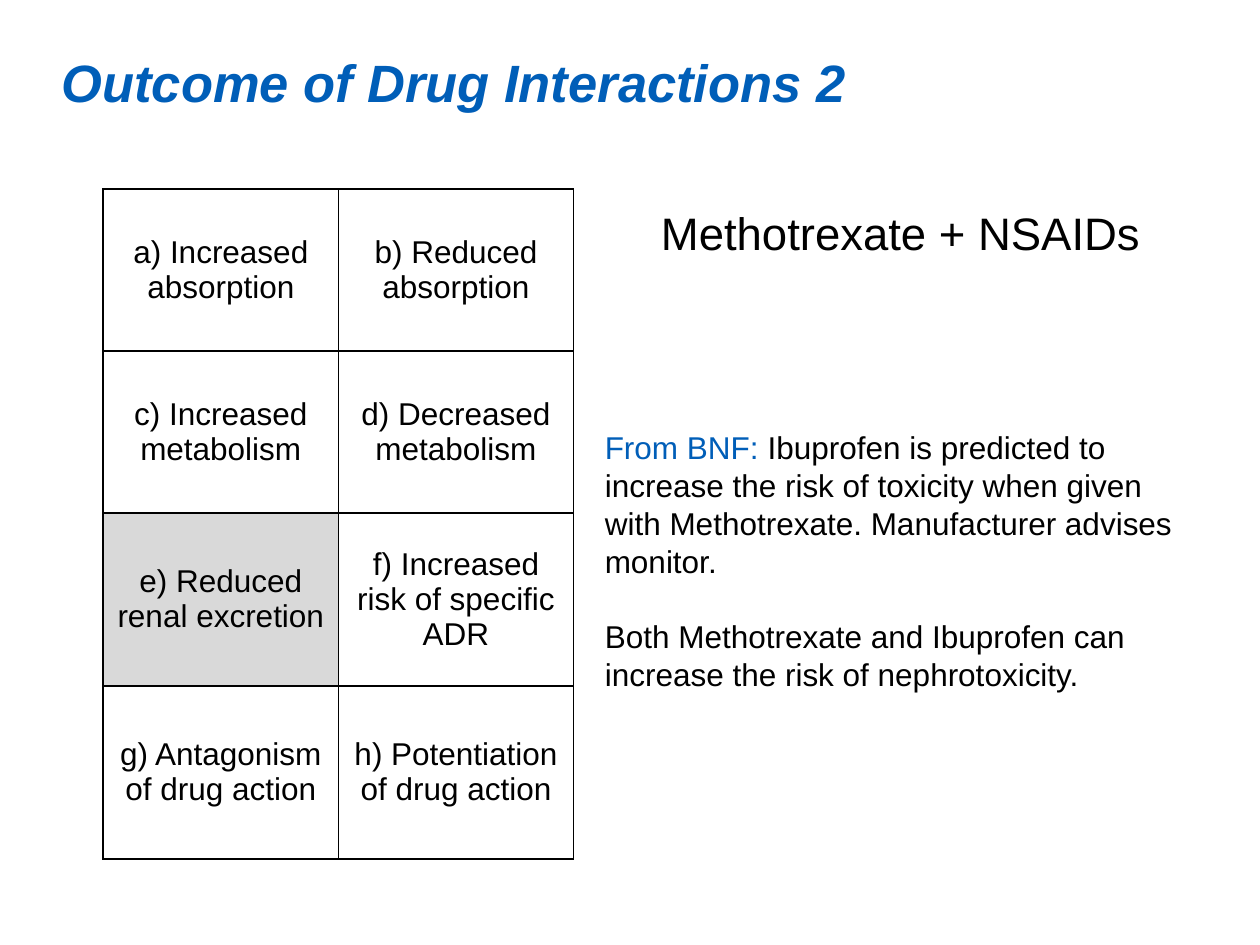
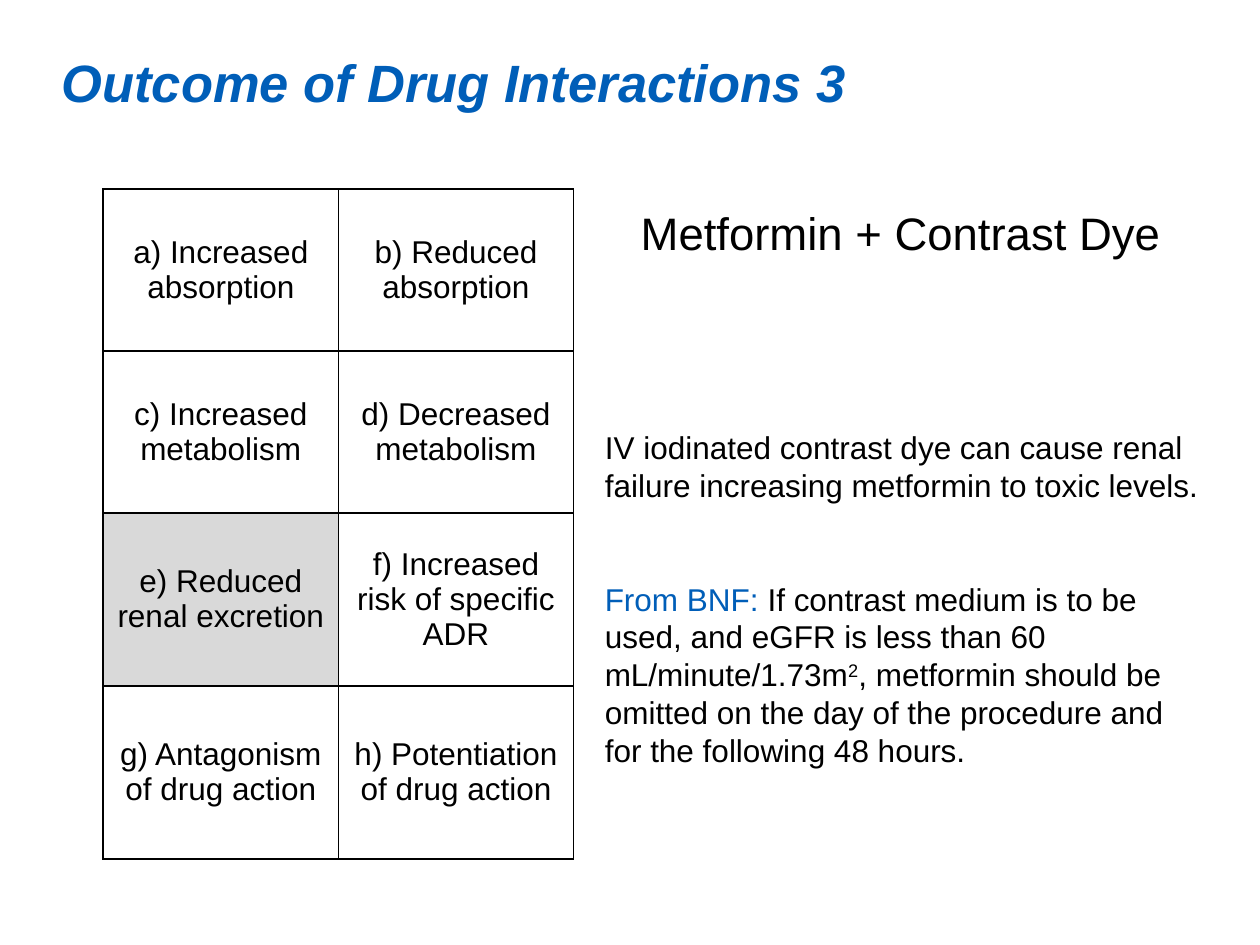
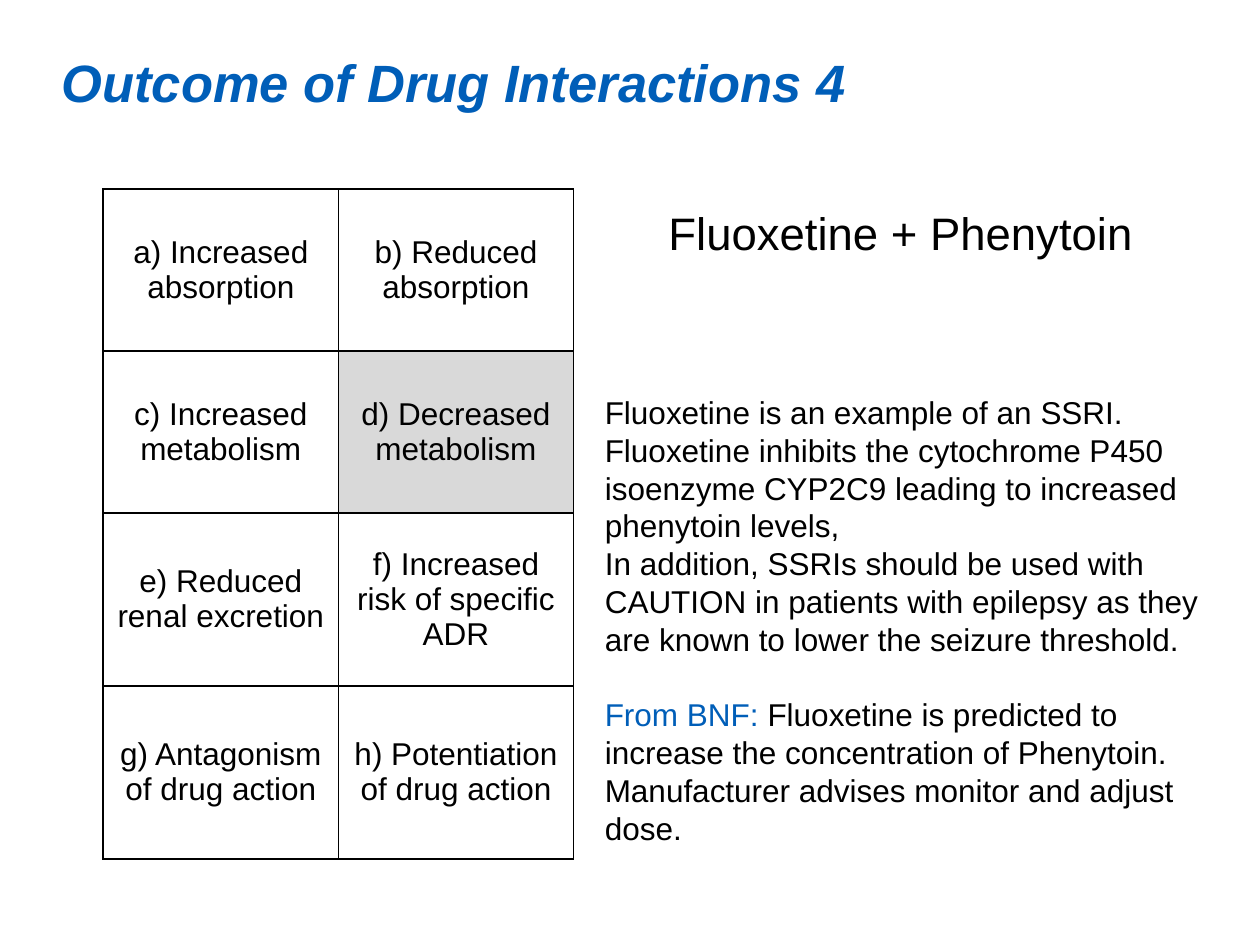
import pptx
import pptx.dml.color
import pptx.enum.text
import pptx.oxml
import pptx.oxml.ns
import pptx.util

Pt = pptx.util.Pt
RGBColor = pptx.dml.color.RGBColor
PP_ALIGN = pptx.enum.text.PP_ALIGN

BLUE = RGBColor(0x00, 0x5E, 0xB8)
BLACK = RGBColor(0x00, 0x00, 0x00)
WHITE = RGBColor(0xFF, 0xFF, 0xFF)
GREY = RGBColor(0xD9, 0xD9, 0xD9)

BODY_SIZE = 18
BODY_LEADING = 21.6
BNF = ("From BNF: ", BLUE)

OUTCOMES = [
    ("a) Increased absorption", "b) Reduced absorption"),
    ("c) Increased metabolism", "d) Decreased metabolism"),
    ("e) Reduced renal excretion", "f) Increased risk of specific ADR"),
    ("g) Antagonism of drug action", "h) Potentiation of drug action"),
]
ROW_HEIGHTS = (92.6, 92.6, 98.8, 98.8)
COLUMN_WIDTH = 134.4

INTERACTIONS = [
    {
        "number": 2,
        "drugs": "Methotrexate + NSAIDs",
        "answer": "e",
        "top": 244.8,
        "height": 152.6,
        "explanation": [
            (0, [BNF, ("Ibuprofen is predicted to increase the risk of toxicity when given "
                       "with Methotrexate. Manufacturer advises monitor.", BLACK)]),
            (1, [("Both Methotrexate and Ibuprofen can increase the risk of "
                  "nephrotoxicity.", BLACK)]),
        ],
    },
    {
        "number": 3,
        "drugs": "Metformin + Contrast Dye",
        "answer": "e",
        "top": 244.8,
        "height": 196.6,
        "explanation": [
            (0, [("IV iodinated contrast dye can cause renal failure increasing "
                  "metformin to toxic levels.", BLACK)]),
            (2, [BNF, ("If contrast medium is to be used, and eGFR is less than "
                       "60 mL/minute/1.73m", BLACK),
                 ("2", BLACK, True),
                 (", metformin should be omitted on the day of the procedure and for "
                  "the following 48 hours.", BLACK)]),
        ],
    },
    {
        "number": 4,
        "drugs": "Fluoxetine + Phenytoin",
        "answer": "d",
        "top": 224.6,
        "height": 262,
        "explanation": [
            (0, [("Fluoxetine is an example of an SSRI. Fluoxetine inhibits the "
                  "cytochrome P450 isoenzyme CYP2C9 leading to increased phenytoin "
                  "levels,", BLACK)]),
            (0, [("In addition, SSRIs should be used with CAUTION in patients with "
                  "epilepsy as they are known to lower the seizure threshold.", BLACK)]),
            (1, [BNF, ("Fluoxetine is predicted to increase the concentration of "
                       "Phenytoin. Manufacturer advises monitor and adjust dose.", BLACK)]),
        ],
    },
]


class InteractionDeck:
    """Hold the shared style and the current slide, and add its elements."""

    font = "Arial"

    def __init__(self):
        self.presentation = pptx.Presentation()
        self.presentation.slide_width = Pt(720)
        self.presentation.slide_height = Pt(540)
        self.slide = None

    def new_slide(self):
        self.slide = self.presentation.slides.add_slide(self.presentation.slide_layouts[6])

    def run(self, paragraph, text, size, color, superscript=False, strong=False):
        run = paragraph.add_run()
        run.text = text
        run.font.name = self.font
        run.font.size = Pt(size)
        run.font.color.rgb = color
        if strong:
            run.font.bold = run.font.italic = True
        if superscript:
            run._r.get_or_add_rPr().set("baseline", "30000")

    def text_frame(self, left, top, width, height):
        box = self.slide.shapes.add_textbox(Pt(left), Pt(top), Pt(width), Pt(height))
        frame = box.text_frame
        frame.word_wrap = True
        frame.auto_size = pptx.enum.text.MSO_AUTO_SIZE.SHAPE_TO_FIT_TEXT
        frame.margin_left = frame.margin_right = frame.margin_top = frame.margin_bottom = 0
        return frame

    def title(self, text):
        heading = self.text_frame(35.3, 28.8, 620, 36).paragraphs[0]
        heading.line_spacing = Pt(36)
        self.run(heading, text, 30, BLUE, strong=True)

    def drug_pair(self, text):
        pair = self.text_frame(360, 117.4, 309.6, 31.7).paragraphs[0]
        pair.alignment = PP_ALIGN.CENTER
        pair.line_spacing = Pt(31.2)
        self.run(pair, text, 26, BLACK)

    def explanation(self, top, height, paragraphs):
        frame = self.text_frame(345.6, top, 339.8, height)
        for index, (lines_before, parts) in enumerate(paragraphs):
            paragraph = frame.add_paragraph() if index else frame.paragraphs[0]
            paragraph.line_spacing = Pt(BODY_LEADING)
            if lines_before:
                paragraph.space_before = Pt(lines_before * BODY_LEADING)
            for text, *style in parts:
                self.run(paragraph, text, BODY_SIZE, *style)

    def borders(self, cell):
        properties = cell._tc.get_or_add_tcPr()
        for side in ("lnL", "lnR", "lnT", "lnB"):
            properties.append(pptx.oxml.parse_xml(
                f'<a:{side} {pptx.oxml.ns.nsdecls("a")} w="{Pt(1)}"><a:solidFill>'
                f'<a:srgbClr val="{BLACK}"/></a:solidFill></a:{side}>'))

    def outcome_cell(self, cell, outcome, chosen):
        cell.margin_left = cell.margin_right = Pt(4.5)
        cell.margin_top = cell.margin_bottom = 0
        cell.vertical_anchor = pptx.enum.text.MSO_ANCHOR.MIDDLE
        self.borders(cell)
        cell.fill.solid()
        cell.fill.fore_color.rgb = GREY if chosen else WHITE
        paragraph = cell.text_frame.paragraphs[0]
        paragraph.alignment = PP_ALIGN.CENTER
        paragraph.line_spacing = Pt(20)
        self.run(paragraph, outcome, BODY_SIZE, BLACK)

    def outcome_table(self, answer):
        table = self.slide.shapes.add_table(
            len(OUTCOMES), 2, Pt(59), Pt(108),
            Pt(2 * COLUMN_WIDTH), Pt(sum(ROW_HEIGHTS))).table
        table.first_row = table.horz_banding = False
        for column in table.columns:
            column.width = Pt(COLUMN_WIDTH)
        for row, height, outcomes in zip(table.rows, ROW_HEIGHTS, OUTCOMES):
            row.height = Pt(height)
            for cell, outcome in zip(row.cells, outcomes):
                self.outcome_cell(cell, outcome, outcome.startswith(answer))


def main():
    deck = InteractionDeck()
    for interaction in INTERACTIONS:
        deck.new_slide()
        deck.title(f"Outcome of Drug Interactions {interaction['number']}")
        deck.drug_pair(interaction["drugs"])
        deck.explanation(interaction["top"], interaction["height"], interaction["explanation"])
        deck.outcome_table(interaction["answer"])
    deck.presentation.save("out.pptx")


if __name__ == "__main__":
    main()
